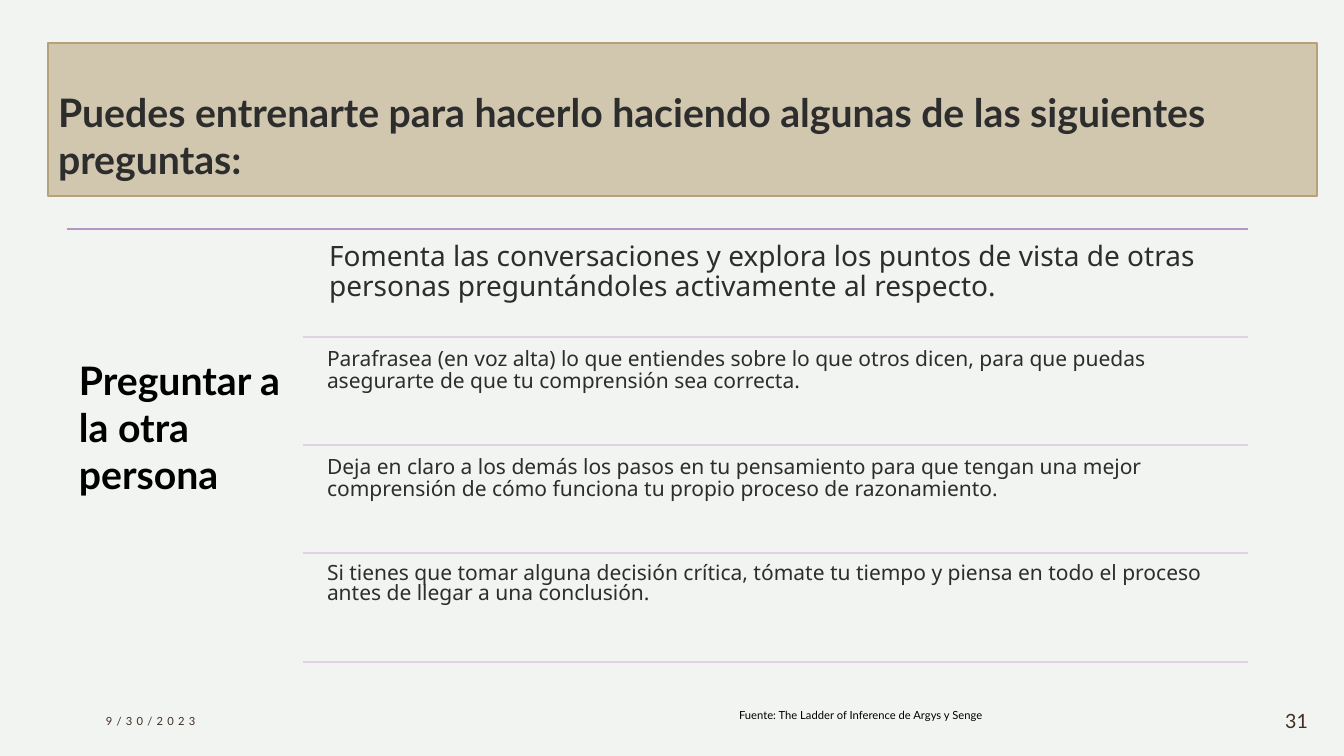
import pptx
import pptx.util
import pptx.dml.color
import pptx.enum.shapes
import pptx.enum.text
import pptx.oxml

RGB = pptx.dml.color.RGBColor
ALIGN = pptx.enum.text.PP_ALIGN
ANCHOR = pptx.enum.text.MSO_ANCHOR

PAPER = RGB(0xF2, 0xF4, 0xF1)
SAND = RGB(0xD1, 0xC7, 0xAF)
SAND_EDGE = RGB(0xB3, 0xA2, 0x7A)
INK = RGB(0x2D, 0x2D, 0x2D)
BLACK = RGB(0, 0, 0)
BROWN = RGB(0x41, 0x2D, 0x24)
PURPLE = RGB(0xB4, 0x96, 0xC6)
LILAC = RGB(0xDE, 0xD3, 0xE5)

EMU_PER_PX = 914400 / 100.8

TITLE = "Puedes entrenarte para hacerlo haciendo algunas de las siguientes preguntas:"
TOPIC = "Preguntar a la otra persona"
ADVICE = [
    ("Fomenta las conversaciones y explora los puntos de vista de otras personas "
     "preguntándoles activamente al respecto.", 20, 8, 0.9),
    ("Parafrasea (en voz alta) lo que entiendes sobre lo que otros dicen, para que "
     "puedas asegurarte de que tu comprensión sea correcta.", 15, 6, 0.9),
    ("Deja en claro a los demás los pasos en tu pensamiento para que tengan una mejor "
     "comprensión de cómo funciona tu propio proceso de razonamiento.", 15, 6, 0.9),
    ("Si tienes que tomar alguna decisión crítica, tómate tu tiempo y piensa en todo "
     "el proceso antes de llegar a una conclusión.", 15, 6, 0.8),
]


def px(length):
    """Turn pixels into EMU."""
    return pptx.util.Emu(round(length * EMU_PER_PX))


def write(shape, text, size, color, font="Lato", bold=False, align=ALIGN.LEFT,
          anchor=ANCHOR.TOP, insets=(9, 5, 9, 5), leading=1.0):
    """Fill a shape with one formatted paragraph and return its run."""
    frame = shape.text_frame
    frame.word_wrap = True
    frame.vertical_anchor = anchor
    (frame.margin_left, frame.margin_top,
     frame.margin_right, frame.margin_bottom) = map(px, insets)
    para = frame.paragraphs[0]
    para.text = text
    para.alignment = align
    para.line_spacing = leading
    span = para.runs[0]
    span.font.name = font
    span.font.size = pptx.util.Pt(size)
    span.font.bold = bold
    span.font.color.rgb = color
    return span


def add_text(page, box, text, size, color, **style):
    """Add a text box at the given box and return its run."""
    return write(page.shapes.add_textbox(*map(px, box)), text, size, color, **style)


def add_rule(page, left, right, top, color):
    """Draw a horizontal line."""
    rule = page.shapes.add_connector(pptx.enum.shapes.MSO_CONNECTOR.STRAIGHT,
                                     px(left), px(top), px(right), px(top))
    rule.line.color.rgb = color
    rule.line.width = pptx.util.Pt(1.5)
    rule._element.spPr.append(pptx.oxml.parse_xml(
        '<a:effectLst xmlns:a="http://schemas.openxmlformats.org/drawingml/2006/main"/>'))


def add_title(page, box):
    """Draw the title banner."""
    banner = page.shapes.add_shape(pptx.enum.shapes.MSO_SHAPE.RECTANGLE, *map(px, box))
    banner.shadow.inherit = False
    banner.fill.solid()
    banner.fill.fore_color.rgb = SAND
    banner.line.color.rgb = SAND_EDGE
    banner.line.width = pptx.util.Pt(1.5)
    write(banner, TITLE, 28, INK, bold=True, insets=(10, 45, 10, 5))


def add_advice(page, box):
    """Draw the topic on the left and its ruled rows of advice on the right."""
    left, top, width, height = box
    right = left + width
    add_rule(page, left, right, top, PURPLE)
    add_text(page, (left, top, 236, height - 38), TOPIC, 28, BLACK, bold=True,
             anchor=ANCHOR.MIDDLE, insets=(12, 12, 12, 12))
    for index, (text, size, inset, leading) in enumerate(ADVICE):
        row_top = top + index * height // len(ADVICE)
        row_bottom = top + (index + 1) * height // len(ADVICE)
        add_text(page, (left + 254, row_top + 5, width - 254, 103), text, size, INK,
                 font="Noto Sans", insets=(inset,) * 4, leading=leading)
        add_rule(page, left + 236, right, row_bottom, LILAC)


def add_footer(page, box):
    """Place the date, the source and the page number."""
    left, top, width, height = box
    date = add_text(page, (left, top, 302, height), "9/30/2023", 8, BROWN,
                    anchor=ANCHOR.MIDDLE)
    date.font._element.set("spc", "300")
    add_text(page, (left + 633, top - 6, 530, height),
             "Fuente: The Ladder of Inference de Argys y Senge", 8, BLACK,
             anchor=ANCHOR.MIDDLE)
    add_text(page, (left + width - 57, top, 57, height), "31", 14, BROWN,
             align=ALIGN.RIGHT, anchor=ANCHOR.MIDDLE)


def main():
    """Build and save the deck."""
    deck = pptx.Presentation()
    deck.slide_width, deck.slide_height = px(1344), px(756)
    page = deck.slides.add_slide(deck.slide_layouts[6])
    page.background.fill.solid()
    page.background.fill.fore_color.rgb = PAPER
    add_title(page, (48, 43, 1269, 153))
    add_advice(page, (67, 229, 1181, 433))
    add_footer(page, (97, 700, 1220, 41))
    deck.save("out.pptx")


if __name__ == "__main__":
    main()
